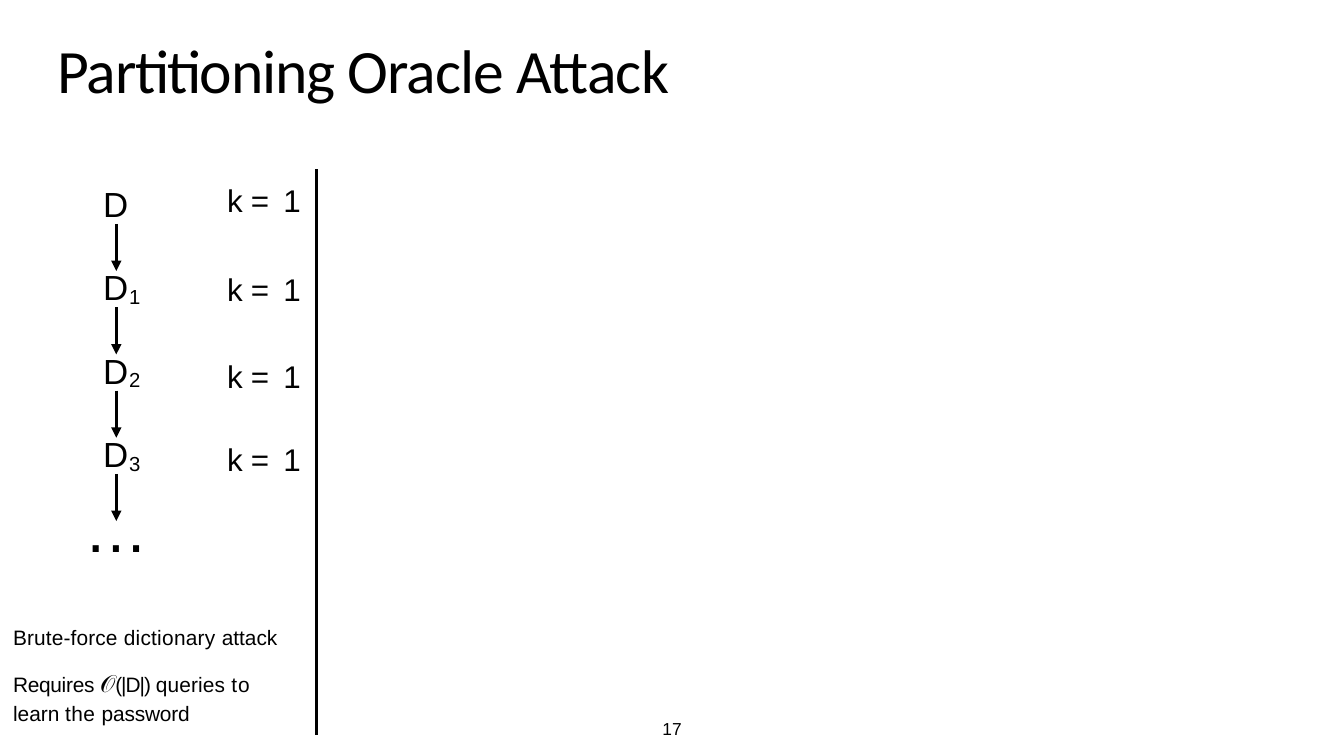
from dataclasses import dataclass

from lxml.etree import SubElement
from pptx import Presentation
from pptx.dml.color import RGBColor
from pptx.enum.shapes import MSO_CONNECTOR as Connector
from pptx.enum.text import MSO_ANCHOR as Anchor
from pptx.oxml.ns import qn
from pptx.util import Cm, Pt


@dataclass(frozen=True)
class Theme:
    ink: RGBColor = RGBColor(0, 0, 0)
    title_font: str = "Calibri"
    body_font: str = "Arial"
    symbol_font: str = "DejaVu Sans Mono"
    title: float = 44
    node: float = 24.9
    subscript: float = 25
    ellipsis: float = 45.5
    label: float = 22.4
    note: float = 14.9
    symbol: float = 17.3
    number: float = 12.4
    line: float = 2.47


class SlideBuilder:
    def __init__(self, slide, theme):
        self.slide = slide
        self.theme = theme

    def text_box(self, left, top, width, height, anchor=Anchor.TOP):
        shape = self.slide.shapes.add_textbox(Cm(left), Cm(top), Cm(width), Cm(height))
        frame = shape.text_frame
        frame.word_wrap = True
        frame.vertical_anchor = anchor
        frame.margin_left = frame.margin_right = 0
        frame.margin_top = frame.margin_bottom = 0
        return frame

    def run(self, paragraph, text, size, spacing=0, font=None, baseline=0):
        run = paragraph.add_run()
        run.text = text
        run.font.size = Pt(size)
        run.font.name = font or self.theme.body_font
        run.font.color.rgb = self.theme.ink
        properties = run.font._element
        properties.set("spc", str(round(spacing * 100)))
        if baseline:
            properties.set("baseline", str(baseline * 1000))
        if font == self.theme.symbol_font:
            for tag in ("a:ea", "a:cs"):
                SubElement(properties, qn(tag)).set("typeface", font)

    def runs(self, paragraph, size, pieces, font=None):
        for text, spacing in pieces:
            self.run(paragraph, text, size, spacing, font)

    def vertical_line(self, x, top, bottom, arrow=False):
        connector = self.slide.shapes.add_connector(
            Connector.STRAIGHT, Cm(x), Cm(top), Cm(x), Cm(bottom))
        connector.line.color.rgb = self.theme.ink
        connector.line.width = Pt(self.theme.line)
        properties = connector._element.spPr
        if arrow:
            SubElement(properties.find(qn("a:ln")), qn("a:tailEnd")).set("type", "triangle")
        SubElement(properties, qn("a:effectLst"))

    def title(self):
        frame = self.text_box(1.45, 0.79, 17.7, 1.88, Anchor.MIDDLE)
        self.runs(frame.paragraphs[0], self.theme.title,
                  [("Partitioning ", -0.9), ("Oracle ", -0.8), ("Attack", -0.7)],
                  self.theme.title_font)

    def node(self, top, subscript):
        paragraph = self.text_box(2.6, top, 1.2, 1.07).paragraphs[0]
        self.run(paragraph, "D", self.theme.node, 0.6)
        if subscript:
            self.run(paragraph, subscript, self.theme.subscript, baseline=-10)

    def ellipsis(self):
        paragraph = self.text_box(2.14, 12.32, 1.8, 1.9).paragraphs[0]
        self.run(paragraph, "…", self.theme.ellipsis)

    def label(self, top):
        paragraph = self.text_box(5.72, top, 2, 0.97).paragraphs[0]
        self.runs(paragraph, self.theme.label, [("k ", -0.4), ("= ", 1.9), ("1", 0)])

    def note(self):
        theme = self.theme
        frame = self.text_box(0.33, 15.75, 7.4, 2.59)
        self.runs(frame.paragraphs[0], theme.note,
                  [("Brute-force ", 0.1), ("dictionary ", 0.2), ("attack", 0)])
        paragraph = frame.add_paragraph()
        paragraph.line_spacing = 1.16
        paragraph.space_before = Pt(9.5)
        self.run(paragraph, "Requires ", theme.note, -0.2)
        self.run(paragraph, "𝒪", theme.symbol, -0.7, theme.symbol_font)
        self.runs(paragraph, theme.note, [("(|D|) ", -0.7), ("queries ", 0.1), ("to", 0.7)])
        paragraph.add_line_break()
        self.runs(paragraph, theme.note, [("learn ", 0), ("the ", 0.3), ("password", -0.1)])

    def page_number(self):
        paragraph = self.text_box(16.69, 18.14, 0.8, 0.46).paragraphs[0]
        paragraph.line_spacing = Pt(13.3)
        self.run(paragraph, "17", self.theme.number)


def main():
    presentation = Presentation()
    presentation.slide_width = Cm(33.86)
    presentation.slide_height = Cm(19.05)
    slide = presentation.slides.add_slide(presentation.slide_layouts[6])
    builder = SlideBuilder(slide, Theme())

    builder.title()
    builder.vertical_line(7.98, 4.27, 18.52)
    builder.note()
    node_step = 2.1
    label_tops = (4.57, 6.81, 8.99, 11.1)
    for index, label_top in enumerate(label_tops):
        offset = index * node_step
        builder.node(4.6 + offset, str(index) if index else "")
        builder.vertical_line(2.93, 5.64 + offset, 6.83 + offset, arrow=True)
        builder.label(label_top)
    builder.ellipsis()
    builder.page_number()
    presentation.save("out.pptx")


if __name__ == "__main__":
    main()
